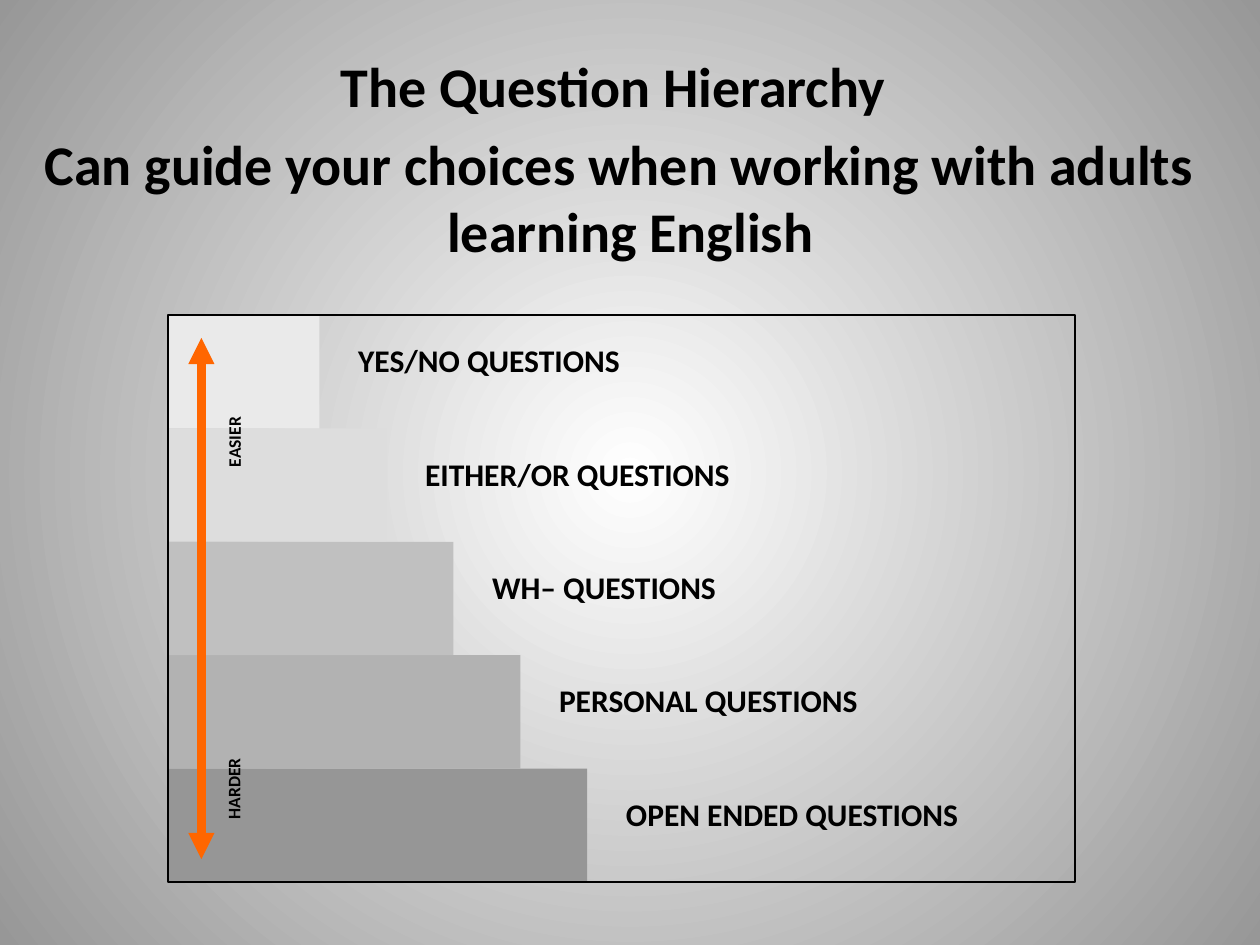
from lxml import etree
from pptx import Presentation
from pptx.dml.color import RGBColor
from pptx.enum import shapes, text
from pptx.oxml.ns import qn
from pptx.util import Cm, Pt

FRAME_LEFT, FRAME_TOP, FRAME_WIDTH, FRAME_HEIGHT = 3.39, 6.35, 18.29, 11.43
FIRST_WIDTH, WIDTH_STEP, LABEL_GAP = 3.05, 1.35, 0.68
ARROW_X = 4.06

# Label, step colour, label width in cm; easiest first
LEVELS = [
    ("YES/NO QUESTIONS", "EAEAEA", 7.11),
    ("EITHER/OR QUESTIONS", "DDDDDD", 8.13),
    ("WH– QUESTIONS", "C0C0C0", 6.43),
    ("PERSONAL QUESTIONS", "B2B2B2", 8.46),
    ("OPEN ENDED QUESTIONS", "969696", 9.47),
]
STEP_HEIGHT = FRAME_HEIGHT / len(LEVELS)


def colour(value):
    return RGBColor.from_string(value)


def set_background(page, centre, edge):
    """Fill the page with a gradient that spreads from its middle."""
    fill = page.background.fill
    fill.gradient()
    for stop, value in zip(fill.gradient_stops, (centre, edge)):
        stop.color.rgb = colour(value)
    gradient = page.element.find(".//" + qn("a:gradFill"))
    gradient.remove(gradient.find(qn("a:lin")))
    circle = etree.SubElement(gradient, qn("a:path"), path="circle")
    etree.SubElement(circle, qn("a:fillToRect"),
                     l="50000", t="50000", r="50000", b="50000")


def add_span(para, words, size):
    span = para.add_run()
    span.text = words
    span.font.name = "Calibri"
    span.font.size = Pt(size)
    span.font.bold = True
    span.font.color.rgb = colour("000000")


def fill_title(title, lines):
    title.left, title.top = Cm(0.64), Cm(0.84)
    title.width, title.height = Cm(23.7), Cm(5.72)
    frame = title.text_frame
    frame.word_wrap = True
    frame.auto_size = text.MSO_AUTO_SIZE.NONE
    frame.vertical_anchor = text.MSO_ANCHOR.TOP
    frame.margin_top = Cm(0.19)
    for index, line in enumerate(lines):
        para = frame.add_paragraph() if index else frame.paragraphs[0]
        para.alignment = text.PP_ALIGN.CENTER
        if index:
            para.space_before = Pt(6.4)
        properties = para._p.get_or_add_pPr()
        properties.set("marL", str(Cm(0.7)))
        properties.set("indent", str(Cm(-0.7)))
        add_span(para, line, 32)


def add_rectangle(group, left, top, width, height, fill=None, line=None):
    box = group.shapes.add_shape(shapes.MSO_SHAPE.RECTANGLE,
                                 Cm(left), Cm(top), Cm(width), Cm(height))
    box.shadow.inherit = False
    if fill:
        box.fill.solid()
        box.fill.fore_color.rgb = colour(fill)
    else:
        box.fill.background()
    if line:
        box.line.color.rgb = colour(line)
        box.line.width = Pt(1)
    else:
        box.line.fill.background()


def add_label(group, words, size, left, top, width, height,
              top_margin=0.1, rotation=0):
    box = group.shapes.add_textbox(Cm(left), Cm(top), Cm(width), Cm(height))
    box.rotation = rotation
    frame = box.text_frame
    frame.word_wrap = True
    frame.margin_left = frame.margin_right = frame.margin_bottom = Cm(0.1)
    frame.margin_top = Cm(top_margin)
    add_span(frame.paragraphs[0], words, size)


def add_double_arrow(group, x, bottom, top):
    arrow = group.shapes.add_connector(shapes.MSO_CONNECTOR.STRAIGHT,
                                       Cm(x), Cm(bottom), Cm(x), Cm(top))
    arrow.line.color.rgb = colour("FF6600")
    arrow.line.width = Pt(5)
    outline = arrow.line._get_or_add_ln()
    for end in ("a:headEnd", "a:tailEnd"):
        etree.SubElement(outline, qn(end), type="triangle")
    etree.SubElement(arrow._element.spPr, qn("a:effectLst"))


def add_staircase(page):
    group = page.shapes.add_group_shape()
    steps = [(FRAME_TOP + i * STEP_HEIGHT, FIRST_WIDTH + i * WIDTH_STEP, *level)
             for i, level in enumerate(LEVELS)]
    for top, width, _, fill, _ in reversed(steps):
        add_rectangle(group, FRAME_LEFT, top, width, STEP_HEIGHT, fill=fill)
    add_rectangle(group, FRAME_LEFT, FRAME_TOP, FRAME_WIDTH, FRAME_HEIGHT,
                  line="000000")
    add_double_arrow(group, ARROW_X, 17.32, 6.81)
    for top, width, words, _, label_width in steps:
        add_label(group, words, 18, FRAME_LEFT + width + LABEL_GAP, top,
                  label_width, STEP_HEIGHT, top_margin=0.53)
    add_label(group, "EASIER", 10, 3.76, 8.18, 1.98, 0.69, rotation=270)
    add_label(group, "HARDER", 10, 3.56, 15.09, 2.36, 0.69, rotation=270)


def main():
    deck = Presentation()
    deck.slide_width, deck.slide_height = Cm(25.4), Cm(19.05)
    page = deck.slides.add_slide(deck.slide_layouts.get_by_name("Title Only"))
    set_background(page, "FFFFFF", "979797")
    fill_title(page.shapes.title, [
        "The Question Hierarchy ",
        "Can guide your choices when working with adults learning English ",
    ])
    add_staircase(page)
    deck.save("out.pptx")


if __name__ == "__main__":
    main()
